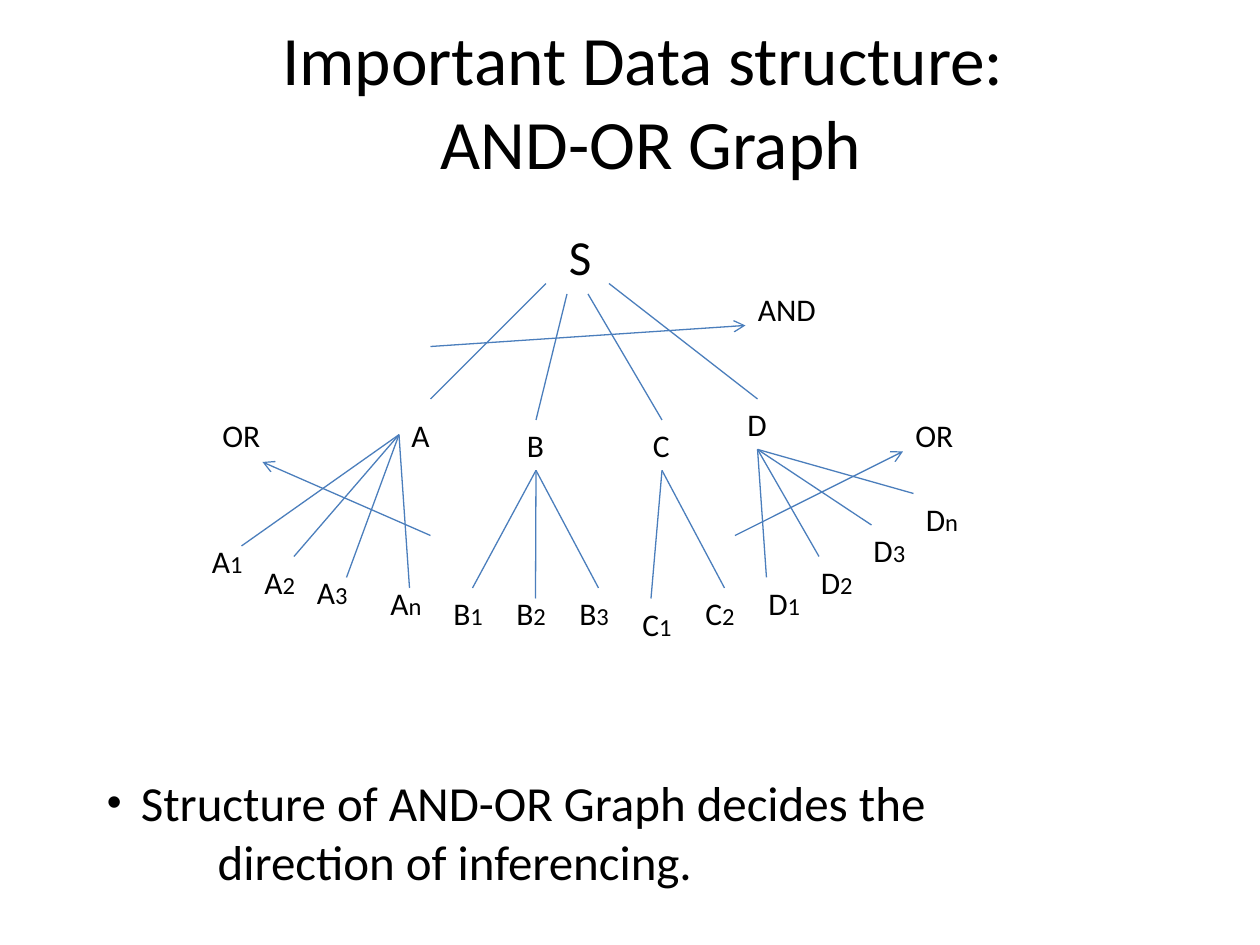
from dataclasses import dataclass
from typing import Optional

from lxml import etree
from pptx import Presentation
from pptx.dml.color import RGBColor
from pptx.enum.shapes import MSO_CONNECTOR
from pptx.enum.text import MSO_ANCHOR, PP_ALIGN
from pptx.oxml.ns import qn
from pptx.util import Inches, Pt

STRAIGHT = MSO_CONNECTOR.STRAIGHT
CENTER, MIDDLE = PP_ALIGN.CENTER, MSO_ANCHOR.MIDDLE
TOP, LEFT, BOTTOM = 0, 1, 2

FONT, INK, EDGE = "Calibri", "000000", "4B7EBC"
COLUMNS, ROWS = 120, 90  # grid of the slide, twelve cells to the inch
LABEL_ROWS, LEAF_ROWS = 4.8, 8.5

prs = Presentation()
prs.slide_width, prs.slide_height = Inches(10), Inches(7.5)
slide = prs.slides.add_slide(prs.slide_layouts[6])


@dataclass
class Leaf:
    suffix: str
    label: tuple[float, float]
    edge_end: tuple[float, float]
    rows: float = LEAF_ROWS


@dataclass
class Branch:
    name: str
    label: tuple[float, float]
    columns: float
    leaf_columns: float
    root_start: tuple[float, float]
    root_end: Optional[tuple[float, float]]  # None joins the label's top
    fan_side: int
    leaves: list[Leaf]


@dataclass
class Relation:
    text: str
    label: tuple[float, float]
    columns: float
    start: tuple[float, float]
    end: tuple[float, float]


def x(column: float) -> int:
    return round(prs.slide_width * column / COLUMNS)


def y(row: float) -> int:
    return round(prs.slide_height * row / ROWS)


def color(value: str) -> RGBColor:
    return RGBColor.from_string(value)


def add_run(paragraph, text: str, size: float) -> None:
    run = paragraph.add_run()
    run.text = text
    run.font.name, run.font.size = FONT, Pt(size)
    run.font.color.rgb = color(INK)


def add_box(at: tuple[float, float], columns: float, rows: float, wrap: bool = False):
    box = slide.shapes.add_textbox(x(at[0]), y(at[1]), x(columns), y(rows))
    box.text_frame.word_wrap = wrap
    return box


def add_label(at: tuple[float, float], columns: float, text: str, suffix: str = "",
              rows: float = LABEL_ROWS, size: float = 18):
    box = add_box(at, columns, rows)
    paragraph = box.text_frame.paragraphs[0]
    add_run(paragraph, text, size)
    if suffix:
        add_run(paragraph, suffix, 14)
    return box


def add_edge(start: tuple[float, float], end: tuple[float, float], arrow: bool = False):
    edge = slide.shapes.add_connector(STRAIGHT, x(start[0]), y(start[1]), x(end[0]), y(end[1]))
    edge.line.color.rgb, edge.line.width = color(EDGE), Pt(0.75)
    if arrow:
        etree.SubElement(edge.line._get_or_add_ln(), qn("a:tailEnd"), type="arrow")
    etree.SubElement(edge._element.spPr, qn("a:effectLst"))
    return edge


def draw_branch(branch: Branch) -> None:
    node = add_label(branch.label, branch.columns, branch.name)
    root_edge = add_edge(branch.root_start, branch.root_end or branch.label)
    if branch.root_end is None:
        root_edge.end_connect(node, TOP)
    for leaf in branch.leaves:
        add_edge(branch.label, leaf.edge_end).begin_connect(node, branch.fan_side)
        add_label(leaf.label, branch.leaf_columns, branch.name, leaf.suffix, leaf.rows)


def draw_relation(relation: Relation) -> None:
    add_edge(relation.start, relation.end, arrow=True)
    add_label(relation.label, relation.columns, relation.text)


def set_indent(paragraph, margin: float, first: float, bullet: str = "") -> None:
    properties = paragraph._p.get_or_add_pPr()
    properties.set("marL", str(Inches(margin)))
    properties.set("indent", str(Inches(first)))
    if bullet:
        etree.SubElement(properties, qn("a:buSzPct"), val="86000")
        etree.SubElement(properties, qn("a:buFont"), typeface="Arial")
        etree.SubElement(properties, qn("a:buChar"), char=bullet)


BRANCHES = [
    Branch("A", (38, 39), 4.2, 5.4, (52, 27), (41, 38), LEFT, [
        Leaf("1", (19, 51), (23, 52), LABEL_ROWS),
        Leaf("2", (24, 53), (28, 53)),
        Leaf("3", (29, 54), (33, 55)),
        Leaf("n", (36, 55), (39, 56))]),
    Branch("B", (49, 40), 4.1, 5.3, (54, 28), None, BOTTOM, [
        Leaf("1", (42, 56), (45, 56)),
        Leaf("2", (48, 56), (51, 57)),
        Leaf("3", (54, 56), (57, 56))]),
    Branch("C", (61, 40), 4.1, 5.3, (56, 28), None, BOTTOM, [
        Leaf("1", (60, 57), (62, 57)),
        Leaf("2", (66, 56), (69, 56))]),
    Branch("D", (70, 38), 4.3, 5.5, (58, 27), None, BOTTOM, [
        Leaf("1", (72, 55), (73, 55)),
        Leaf("2", (77, 53), (78, 53)),
        Leaf("3", (82, 50), (83, 50)),
        Leaf("n", (87, 47), (87, 47))]),
]
RELATIONS = [
    Relation("AND", (71, 27), 8, (41, 33), (71, 31)),
    Relation("OR", (86, 39), 6.1, (70, 51), (86, 43)),
    Relation("OR", (20, 39), 6.1, (41, 51), (25, 44)),
]

# Title
title = add_box((11, 3), 102, 13, wrap=True).text_frame
title.vertical_anchor = MIDDLE
heading = title.paragraphs[0]
heading.alignment = CENTER
add_run(heading, "Important Data structure: ", 39.6)
heading.add_line_break()
add_run(heading, "AND-OR Graph", 39.6)

# Graph: root, branches with their leaves, and relation arrows
add_label((53, 21), 7, "S", rows=6.9, size=28)
for branch in BRANCHES:
    draw_branch(branch)
for relation in RELATIONS:
    draw_relation(relation)

# Conclusion
conclusion = add_box((9, 73), 82.3, 12.5).text_frame
first_line = conclusion.paragraphs[0]
set_indent(first_line, 0.27, -0.27, "•")
add_run(first_line, "Structure of AND-OR Graph decides the", 28)
second_line = conclusion.add_paragraph()
set_indent(second_line, 0.88, 0)
add_run(second_line, "direction of inferencing.", 28)

prs.save("out.pptx")
